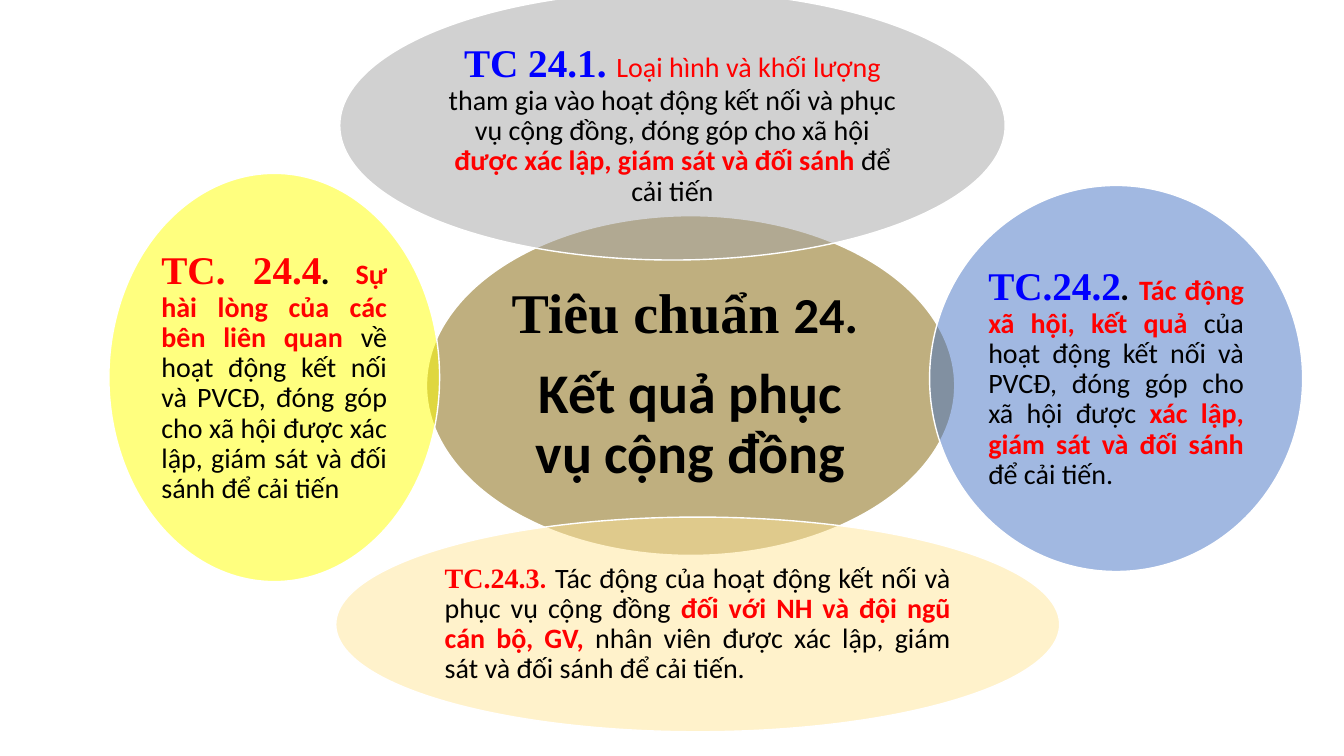
from lxml import etree
from pptx import Presentation
from pptx.dml.color import RGBColor
from pptx.enum import shapes, text
from pptx.oxml import ns
from pptx.util import Inches, Pt

SERIF, SANS = "Times New Roman", "Calibri"
BLACK, RED, BLUE, WHITE = "000000", "FF0000", "0000FF", "FFFFFF"
CENTER, JUSTIFY = text.PP_ALIGN.CENTER, text.PP_ALIGN.JUSTIFY

PLAIN = {"size": 20, "name": SANS, "color": BLACK, "bold": False, "italic": False}
RED_PLAIN = {**PLAIN, "color": RED}
RED_BOLD = {**RED_PLAIN, "bold": True}
RED_DOT = {**RED_BOLD, "italic": True}
BLACK_DOT = {**RED_DOT, "size": 24, "color": BLACK}
RED_CODE = {**RED_BOLD, "size": 28, "name": SERIF}
BLUE_CODE = {**RED_CODE, "color": BLUE}
SMALL_CODE = {**RED_CODE, "size": 20}
HEADING = {**PLAIN, "size": 40, "bold": True}

CRITERIA = [
    {"box": (4.23, 2.14, 5.24, 3.37), "fill": "806000", "inset": 0.06, "align": CENTER,
     "paragraphs": [
         [("Tiêu chuẩn ", {**HEADING, "name": SERIF}), ("24. ", {**HEADING, "size": 36})],
         [("Kết quả phục vụ cộng đồng", HEADING)]]},
    {"box": (3.37, -0.09, 6.6, 2.67), "fill": "A5A5A5", "inset": 0.04, "align": CENTER,
     "paragraphs": [
         [("TC 24.1. ", BLUE_CODE),
          ("Loại hình và khối lượng ", RED_PLAIN),
          ("tham gia vào hoạt động kết nối và phục vụ cộng đồng, đóng góp cho xã hội ", PLAIN),
          ("được xác lập, giám sát và đối sánh ", RED_BOLD),
          ("để cải tiến", PLAIN)]]},
    {"box": (9.22, 1.84, 3.7, 3.83), "fill": "4472C4", "inset": 0.04, "align": JUSTIFY,
     "paragraphs": [
         [("TC.24.2", BLUE_CODE),
          (". ", BLACK_DOT),
          ("Tác động xã hội, kết quả ", RED_BOLD),
          ("của hoạt động kết nối và PVCĐ, đóng góp cho xã hội được ", PLAIN),
          ("xác lập, giám sát và đối sánh ", RED_BOLD),
          ("để cải tiến.", PLAIN)]]},
    {"box": (3.33, 5.13, 7.18, 2.13), "fill": "FFE699", "inset": 0.03, "align": JUSTIFY,
     "paragraphs": [
         [("TC.24.3", SMALL_CODE),
          (". ", RED_DOT),
          ("Tác động của hoạt động kết nối và phục vụ cộng đồng ", PLAIN),
          ("đối với NH và đội ngũ cán bộ, GV,", RED_BOLD),
          (" nhân viên được xác lập, giám sát và đối sánh để cải tiến.", PLAIN)]]},
    {"box": (1.08, 1.72, 3.28, 4.05), "fill": "FFFF00", "inset": 0.04, "align": JUSTIFY,
     "paragraphs": [
         [("TC. 24.4", RED_CODE),
          (". ", BLACK_DOT),
          ("Sự hài lòng của các bên liên quan ", RED_BOLD),
          ("về hoạt động kết nối và PVCĐ, đóng góp cho xã hội được xác lập, "
           "giám sát và đối sánh để cải tiến", PLAIN)]]},
]


def paint(color_format, color):
    color_format.rgb = RGBColor.from_string(color)


def fill_half_transparent(ellipse, color):
    ellipse.fill.solid()
    paint(ellipse.fill.fore_color, color)
    color_node = ellipse.fill._xPr.find(".//" + ns.qn("a:srgbClr"))
    etree.SubElement(color_node, ns.qn("a:alpha"), val="50000")


def write_paragraph(paragraph, runs, align):
    paragraph.alignment = align
    paragraph.line_spacing = 0.9
    space_after = etree.SubElement(paragraph._p.get_or_add_pPr(), ns.qn("a:spcAft"))
    etree.SubElement(space_after, ns.qn("a:spcPct"), val="35000")
    for words, look in runs:
        run = paragraph.add_run()
        run.text = words
        for attribute, value in look.items():
            if attribute == "color":
                paint(run.font.color, value)
            else:
                setattr(run.font, attribute, Pt(value) if attribute == "size" else value)


def add_criterion(slide, criterion):
    ellipse = slide.shapes.add_shape(
        shapes.MSO_SHAPE.OVAL, *(Inches(length) for length in criterion["box"]))
    ellipse.shadow.inherit = False
    fill_half_transparent(ellipse, criterion["fill"])
    paint(ellipse.line.color, WHITE)
    ellipse.line.width = Pt(1)

    frame = ellipse.text_frame
    frame.word_wrap = True
    frame.vertical_anchor = text.MSO_ANCHOR.MIDDLE
    for side in ("left", "top", "right", "bottom"):
        setattr(frame, f"margin_{side}", Inches(criterion["inset"]))
    for index, runs in enumerate(criterion["paragraphs"]):
        paragraph = frame.add_paragraph() if index else frame.paragraphs[0]
        write_paragraph(paragraph, runs, criterion["align"])


def main():
    deck = Presentation()
    deck.slide_width, deck.slide_height = Inches(13.33), Inches(7.5)
    slide = deck.slides.add_slide(deck.slide_layouts[6])
    for criterion in CRITERIA:
        add_criterion(slide, criterion)
    deck.save("out.pptx")


if __name__ == "__main__":
    main()
